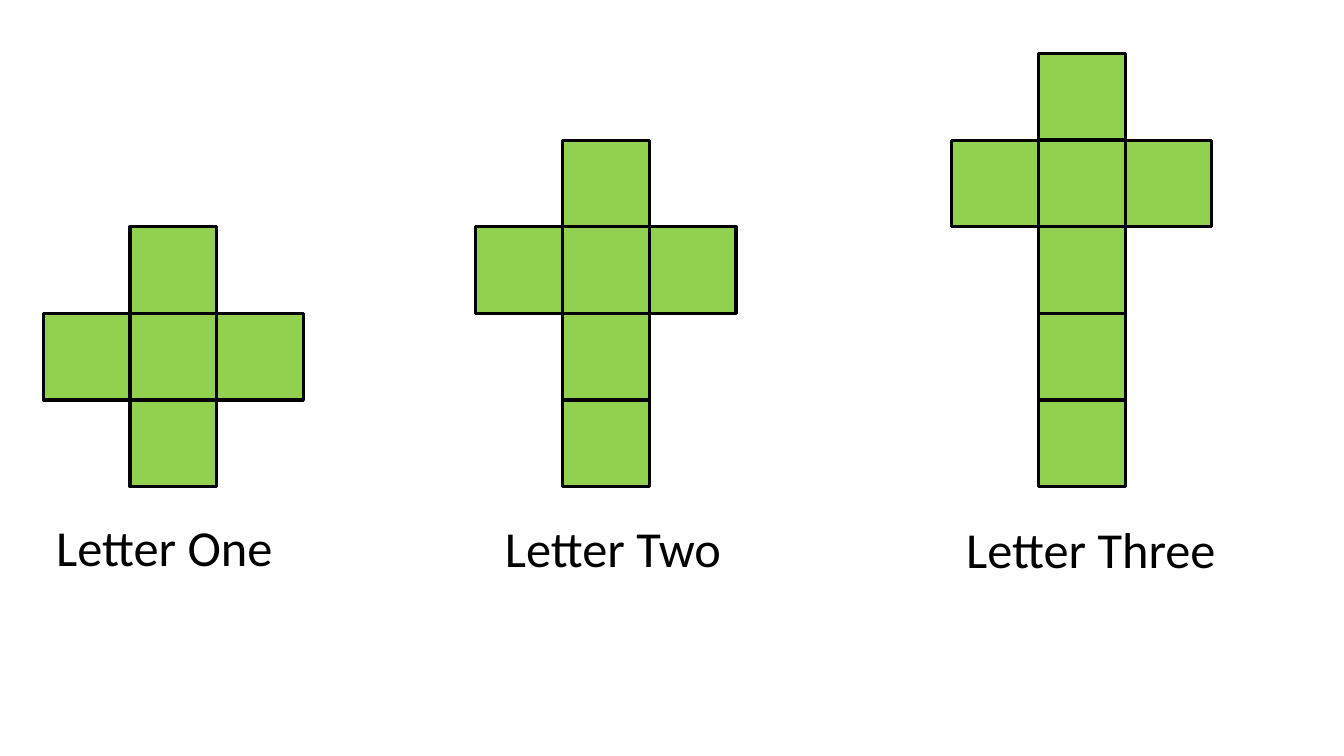
"""Build a slide of three growing cross shapes made from square tiles."""
from pptx import Presentation
from pptx.dml.color import RGBColor
from pptx.enum.shapes import MSO_SHAPE
from pptx.enum.text import MSO_AUTO_SIZE, PP_ALIGN
from pptx.util import Inches, Pt

COLORS = {"tile": "92D050", "ink": "000000"}
TILE = 0.86
BASELINE = 4.83
LABEL_HEIGHT = 0.71
LETTERS = [
    {"label": "Letter One", "stem": 3, "left": 0.43, "label_at": (0.4, 5.07), "label_width": 2.46},
    {"label": "Letter Two", "stem": 4, "left": 4.72, "label_at": (4.85, 5.08), "label_width": 2.46},
    {"label": "Letter Three", "stem": 5, "left": 9.44, "label_at": (9.43, 5.09), "label_width": 2.78},
]


def color(name):
    return RGBColor.from_string(COLORS[name])


def add_label(slide, letter):
    left, top = letter["label_at"]
    box = slide.shapes.add_textbox(
        Inches(left), Inches(top), Inches(letter["label_width"]), Inches(LABEL_HEIGHT)
    )
    frame = box.text_frame
    frame.word_wrap = False
    frame.auto_size = MSO_AUTO_SIZE.SHAPE_TO_FIT_TEXT
    paragraph = frame.paragraphs[0]
    paragraph.text = letter["label"]
    paragraph.alignment = PP_ALIGN.CENTER
    paragraph.font.name = "Calibri"
    paragraph.font.size = Pt(36)
    paragraph.font.color.rgb = color("ink")


def add_cross(slide, letter):
    group = slide.shapes.add_group_shape()
    top = BASELINE - letter["stem"] * TILE
    cells = [(1, row) for row in range(letter["stem"])] + [(0, 1), (2, 1)]
    for column, row in cells:
        tile = group.shapes.add_shape(
            MSO_SHAPE.RECTANGLE,
            Inches(letter["left"] + column * TILE),
            Inches(top + row * TILE),
            Inches(TILE),
            Inches(TILE),
        )
        tile.shadow.inherit = False
        tile.fill.solid()
        tile.fill.fore_color.rgb = color("tile")
        tile.line.color.rgb = color("ink")
        tile.line.width = Pt(2.25)


def main():
    presentation = Presentation()
    presentation.slide_width = Inches(13.33)
    presentation.slide_height = Inches(7.5)
    slide = presentation.slides.add_slide(presentation.slide_layouts[6])
    for letter in LETTERS:
        add_label(slide, letter)
        add_cross(slide, letter)
    presentation.save("out.pptx")


if __name__ == "__main__":
    main()
